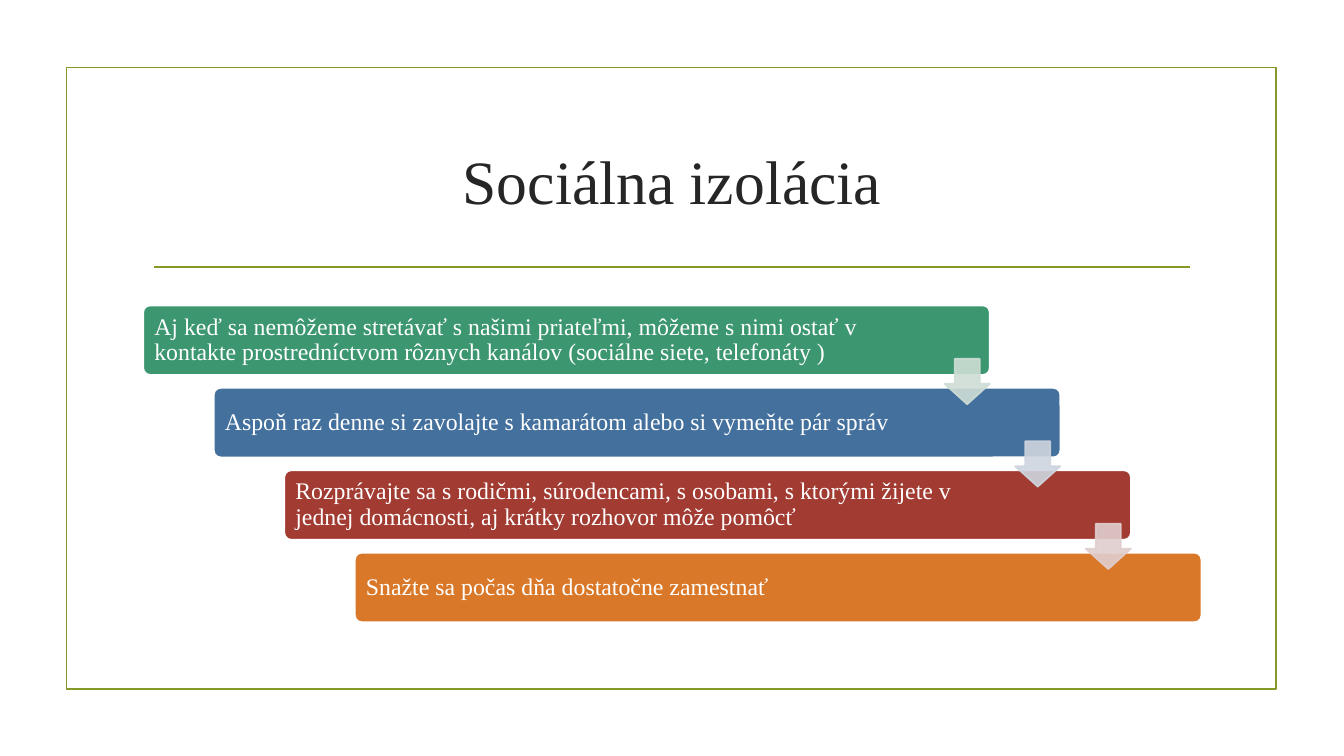
from dataclasses import dataclass
from typing import Any

from lxml import etree
from pptx import Presentation, util as u
from pptx.dml import color
from pptx.enum import shapes, text
from pptx.oxml import ns

SLIDE_W, SLIDE_H = u.Inches(13.333), u.Inches(7.5)
FONT = "Times New Roman"
LINE_WIDTH = u.Pt(1.25)
COLORS = {
    "olive": "83992A", "ink": "262626", "white": "FFFFFF",
    "green": "3C9770", "blue": "44709D", "red": "A23C33", "orange": "D97828",
    "pale_green": "CEDDD5", "pale_blue": "CFD5DF", "pale_red": "E0CECE",
}
STAIR_LEFT, STAIR_TOP = 10.65, 40.4
STEP_X, STEP_Y = 5.25, 10.9


@dataclass(frozen=True)
class Area:
    left: float
    top: float
    width: float
    height: float

    def stepped(self, index: int) -> "Area":
        return Area(self.left + index * STEP_X, self.top + index * STEP_Y,
                    self.width, self.height)

    def lengths(self) -> tuple[int, int, int, int]:
        return (across(self.left), down(self.top), across(self.width), down(self.height))


@dataclass(frozen=True)
class Advice:
    wording: str
    fill: str
    arrow: str | None = None


FRAME = Area(4.95, 8.93, 90, 82.27)
TITLE = Area(10.65, 14.27, 78.75, 19.07)
BAR = Area(STAIR_LEFT, STAIR_TOP, 63, 9.2)
ARROW = Area(STAIR_LEFT + 59.63, STAIR_TOP + 7.07, 3.37, 6)
ADVICE = [
    Advice("Aj keď sa nemôžeme stretávať s našimi priateľmi, môžeme s nimi ostať v "
           "kontakte prostredníctvom rôznych kanálov (sociálne siete, telefonáty )",
           "green", "pale_green"),
    Advice("Aspoň raz denne si zavolajte s kamarátom alebo si vymeňte pár správ",
           "blue", "pale_blue"),
    Advice("Rozprávajte sa s rodičmi, súrodencami, s osobami, s ktorými žijete v "
           "jednej domácnosti, aj krátky rozhovor môže pomôcť",
           "red", "pale_red"),
    Advice("Snažte sa počas dňa dostatočne zamestnať", "orange"),
]
TITLE_FRAME = {"word_wrap": True, "vertical_anchor": text.MSO_ANCHOR.MIDDLE}
BAR_FRAME = TITLE_FRAME | {
    "margin_left": u.Inches(0.09), "margin_right": u.Inches(1.26),
    "margin_top": u.Inches(0.09), "margin_bottom": u.Inches(0.09),
}
TITLE_PARAGRAPH = {"alignment": text.PP_ALIGN.CENTER}
BAR_PARAGRAPH = {"alignment": text.PP_ALIGN.LEFT, "line_spacing": 0.9}


def across(share: float) -> int:
    return round(SLIDE_W * share / 100)


def down(share: float) -> int:
    return round(SLIDE_H * share / 100)


def rgb(name: str) -> color.RGBColor:
    return color.RGBColor.from_string(COLORS[name])


def apply(target: Any, values: dict[str, Any]) -> None:
    for name, value in values.items():
        setattr(target, name, value)


def write(holder: Any, wording: str, size: float, ink: str,
          frame_format: dict[str, Any], paragraph_format: dict[str, Any]) -> None:
    frame = holder.text_frame
    apply(frame, frame_format)
    paragraph = frame.paragraphs[0]
    apply(paragraph, paragraph_format)
    run = paragraph.add_run()
    run.text = wording
    apply(run.font, {"name": FONT, "size": u.Pt(size)})
    run.font.color.rgb = rgb(ink)


def draw(slide: Any, kind: shapes.MSO_SHAPE, area: Area, line: str,
         fill: str | None = None, adjustments: tuple[float, ...] = ()) -> Any:
    figure = slide.shapes.add_shape(kind, *area.lengths())
    figure.shadow.inherit = False
    if fill:
        figure.fill.solid()
        figure.fill.fore_color.rgb = rgb(fill)
    else:
        figure.fill.background()
    figure.line.color.rgb = rgb(line)
    figure.line.width = LINE_WIDTH
    for index, value in enumerate(adjustments):
        figure.adjustments[index] = value
    return figure


def draw_rule(slide: Any) -> None:
    rule = slide.shapes.add_connector(
        shapes.MSO_CONNECTOR.STRAIGHT,
        across(11.48), down(35.33), across(88.58), down(35.33))
    rule.line.color.rgb = rgb("olive")
    rule.line.width = LINE_WIDTH
    etree.SubElement(rule._element.spPr, ns.qn("a:effectLst"))


def draw_arrow(slide: Any, area: Area, tint: str) -> None:
    arrow = draw(slide, shapes.MSO_SHAPE.DOWN_ARROW, area, tint, tint, (0.55, 0.45))
    for shade in arrow._element.spPr.iter(ns.qn("a:srgbClr")):
        etree.SubElement(shade, ns.qn("a:alpha"), val="90000")


def main() -> None:
    deck = Presentation()
    apply(deck, {"slide_width": SLIDE_W, "slide_height": SLIDE_H})
    slide = deck.slides.add_slide(deck.slide_layouts[6])

    draw(slide, shapes.MSO_SHAPE.RECTANGLE, FRAME, "olive")
    draw_rule(slide)
    title = slide.shapes.add_textbox(*TITLE.lengths())
    write(title, "Sociálna izolácia", 44, "ink", TITLE_FRAME, TITLE_PARAGRAPH)

    for index, advice in enumerate(ADVICE):
        bar = draw(slide, shapes.MSO_SHAPE.ROUNDED_RECTANGLE, BAR.stepped(index),
                   "white", advice.fill, (0.1,))
        write(bar, advice.wording, 17, "white", BAR_FRAME, BAR_PARAGRAPH)
    for index, advice in enumerate(ADVICE):
        if advice.arrow:
            draw_arrow(slide, ARROW.stepped(index), advice.arrow)

    deck.save("out.pptx")


if __name__ == "__main__":
    main()
